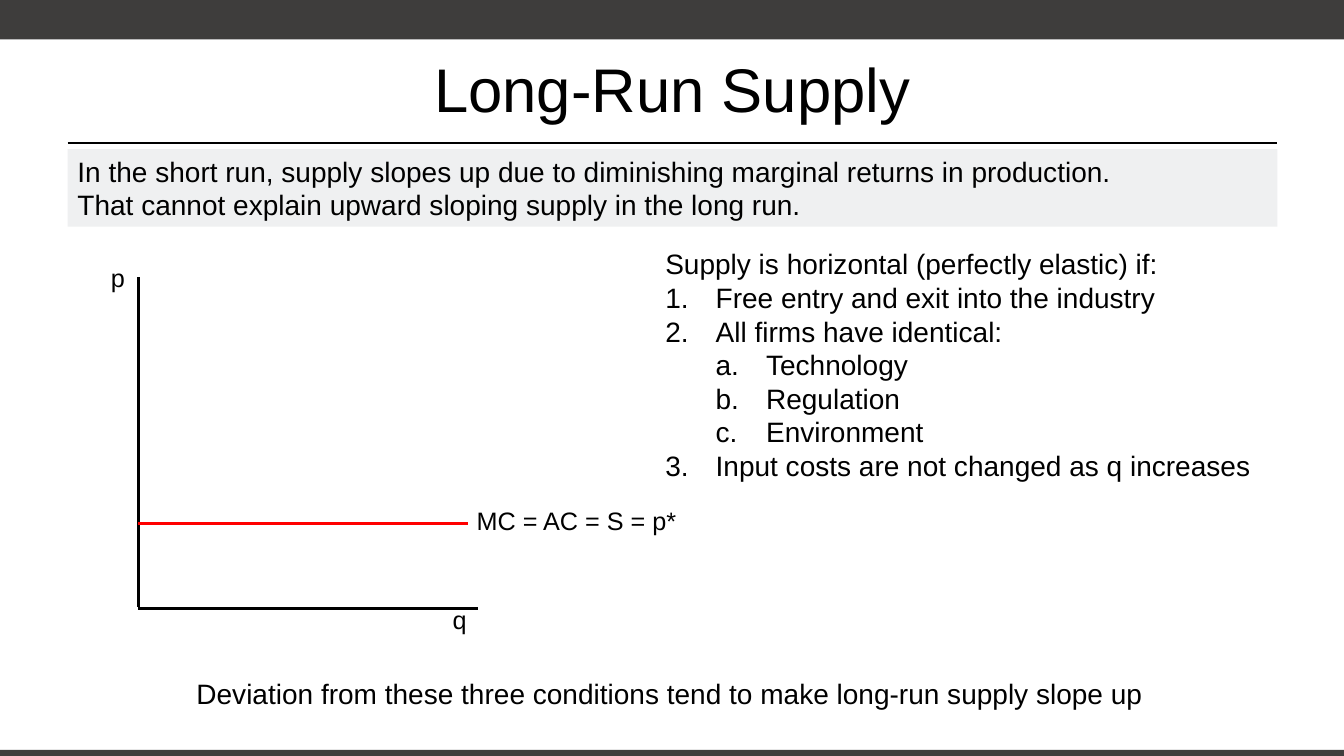
from lxml.etree import SubElement
from pptx import Presentation
from pptx.dml.color import RGBColor
from pptx.enum.shapes import MSO_CONNECTOR, MSO_SHAPE
from pptx.enum.text import MSO_ANCHOR, PP_ALIGN
from pptx.oxml.ns import qn
from pptx.util import Pt

PX = 9144
INDENT = 50
BLACK = RGBColor(0x00, 0x00, 0x00)
RED = RGBColor(0xFF, 0x00, 0x00)
CHARCOAL = RGBColor(0x3E, 0x3D, 0x3C)
PALE_GREY = RGBColor(0xEF, 0xF0, 0xF1)

deck = Presentation()
deck.slide_width = 1333 * PX
deck.slide_height = 750 * PX
page = deck.slides.add_slide(deck.slide_layouts[6])


def add_text(place, lines, size=20, align=PP_ALIGN.LEFT, anchor=MSO_ANCHOR.TOP, wrap=True, fill=None):
    box = page.shapes.add_textbox(*[length * PX for length in place])
    if fill is not None:
        box.fill.solid()
        box.fill.fore_color.rgb = fill
    frame = box.text_frame
    frame.word_wrap = wrap
    frame.vertical_anchor = anchor
    for index, (line, level, numbering) in enumerate(lines):
        para = frame.paragraphs[0] if index == 0 else frame.add_paragraph()
        para.alignment = align
        para.level = level
        span = para.add_run()
        span.text = line
        span.font.name = "Arial"
        span.font.size = Pt(size)
        span.font.color.rgb = BLACK
        if numbering:
            properties = para._p.get_or_add_pPr()
            properties.set("marL", str((level + 1) * INDENT * PX))
            properties.set("indent", str(-INDENT * PX))
            SubElement(properties, qn("a:buFont"), typeface="+mj-lt")
            SubElement(properties, qn("a:buAutoNum"), type=numbering)


for top, height in [(0, 39), (744, 10)]:
    bar = page.shapes.add_shape(MSO_SHAPE.RECTANGLE, 0, top * PX, 1333 * PX, height * PX)
    bar.shadow.inherit = False
    bar.fill.solid()
    bar.fill.fore_color.rgb = CHARCOAL
    bar.line.fill.background()

lines = [
    ((67, 142, 1267, 142), BLACK, 1.25),
    ((137, 275, 137, 602), BLACK, 2),
    ((137, 604, 474, 604), BLACK, 2),
    ((137, 519, 464, 519), RED, 2),
]
for ends, color, width in lines:
    line = page.shapes.add_connector(MSO_CONNECTOR.STRAIGHT, *[length * PX for length in ends])
    line.line.color.rgb = color
    line.line.width = Pt(width)
    SubElement(line._element.spPr, qn("a:effectLst"))

add_text((67, 25, 1200, 125), [("Long-Run Supply", 0, None)], size=44,
         align=PP_ALIGN.CENTER, anchor=MSO_ANCHOR.MIDDLE)
add_text((463, 496, 220, 40), [("MC = AC = S = p*", 0, None)], size=18)
add_text((100, 255, 38, 45), [("p", 0, None)], size=18, wrap=False)
add_text((439, 595, 112, 45), [("q", 0, None)], size=18)
add_text((650, 240, 617, 246), [
    ("Supply is horizontal (perfectly elastic) if:", 0, None),
    ("Free entry and exit into the industry", 0, "arabicPeriod"),
    ("All firms have identical:", 0, "arabicPeriod"),
    ("Technology", 1, "alphaLcPeriod"),
    ("Regulation", 1, "alphaLcPeriod"),
    ("Environment", 1, "alphaLcPeriod"),
    ("Input costs are not changed as q increases", 0, "arabicPeriod"),
])
add_text((67, 148, 1200, 77), [
    ("In the short run, supply slopes up due to diminishing marginal returns in production.", 0, None),
    ("That cannot explain upward sloping supply in the long run.", 0, None),
], fill=PALE_GREY)
add_text((185, 666, 964, 44), [
    ("Deviation from these three conditions tend to make long-run supply slope up", 0, None),
], wrap=False)

deck.save("out.pptx")
